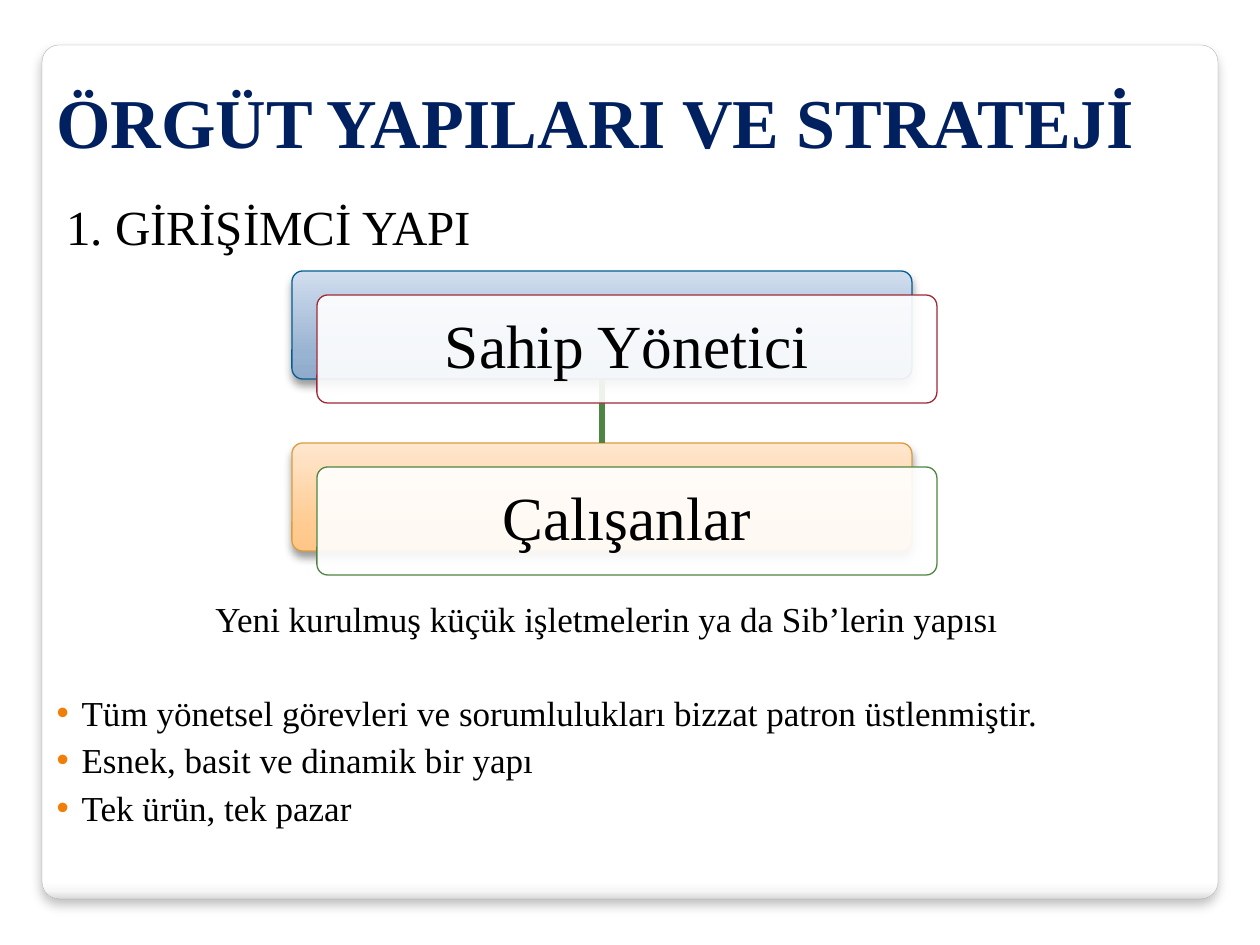
"""Build the slide on organisation structures and strategy: the entrepreneurial structure."""
import pptx
import pptx.util
import pptx.dml.color
import pptx.enum.shapes
import pptx.enum.text
import pptx.oxml.ns
import lxml.etree

RGB = pptx.dml.color.RGBColor
SHAPE = pptx.enum.shapes.MSO_SHAPE
ALIGN = pptx.enum.text.PP_ALIGN
ANCHOR = pptx.enum.text.MSO_ANCHOR
qn = pptx.oxml.ns.qn

NAVY = RGB(0x00, 0x20, 0x60)
BLACK = RGB(0, 0, 0)
WHITE = RGB(255, 255, 255)
GREY = RGB(0xA4, 0xA4, 0xA4)
ORANGE = RGB(0xF0, 0x7F, 0x09)
BLUE = RGB(0x03, 0x5E, 0x94)
RED = RGB(0x9F, 0x29, 0x36)
GOLD = RGB(0xDB, 0x9E, 0x3F)
GREEN = RGB(0x4E, 0x85, 0x42)
PANEL_STOPS = [(0, WHITE), (98, WHITE), (99, RGB(0xF7, 0xF7, 0xF7)), (100, RGB(0xDA, 0xDA, 0xDA))]
BLUE_STOPS = [(0, RGB(0x90, 0xAB, 0xCB)), (25, RGB(0x99, 0xB3, 0xD2)), (100, RGB(0xD1, 0xDE, 0xEE))]
ORANGE_STOPS = [(0, RGB(0xFF, 0xC6, 0x87)), (25, RGB(0xFF, 0xCB, 0x92)), (100, RGB(0xFF, 0xE7, 0xCF))]

FONT = "Times New Roman"
TITLE = "ÖRGÜT YAPILARI VE STRATEJİ"
HEADING = "1. GİRİŞİMCİ YAPI"
CAPTION = "Yeni kurulmuş küçük işletmelerin ya da Sib’lerin yapısı"
TRAITS = [
    "Tüm yönetsel görevleri ve sorumlulukları bizzat patron üstlenmiştir.",
    "Esnek, basit ve dinamik bir yapı",
    "Tek ürün, tek pazar",
]
LEVELS = [
    ("Sahip Yönetici", BLUE_STOPS, BLUE, RED),
    ("Çalışanlar", ORANGE_STOPS, GOLD, GREEN),
]

CARD_LEFT, CARD_TOP, CARD_WIDTH, CARD_HEIGHT = 292, 271, 620, 108
CARD_PITCH = 172
FRONT_DX, FRONT_DY = 25, 24


def px(length):
    return pptx.util.Emu(round(length * 914400 / 126))


def child(parent, tag, **attributes):
    return lxml.etree.SubElement(parent, qn(tag), {k: str(v) for k, v in attributes.items()})


def place(shape, left, top, width, height):
    shape.left, shape.top, shape.width, shape.height = map(px, (left, top, width, height))


def write(shape, lines, size, color=BLACK, align=ALIGN.LEFT, bold=False, top=11):
    frame = shape.text_frame
    frame.text = "\n".join(lines)
    frame.word_wrap = True
    frame.auto_size = pptx.enum.text.MSO_AUTO_SIZE.NONE
    frame.vertical_anchor = ANCHOR.TOP
    frame.margin_top = px(top)
    for index, paragraph in enumerate(frame.paragraphs):
        paragraph.alignment = align
        paragraph.space_before = pptx.util.Pt(3.25 if index else 0)
        for run in paragraph.runs:
            run.font.name, run.font.size, run.font.bold = FONT, pptx.util.Pt(size), bold
            run.font.color.rgb = color
    return frame


def add_bullets(frame):
    for paragraph in frame.paragraphs:
        properties = paragraph._p.get_or_add_pPr()
        properties.set("marL", str(px(25)))
        properties.set("indent", str(px(-25)))
        child(child(properties, "a:buClr"), "a:srgbClr", val=ORANGE)
        child(properties, "a:buFont", typeface="Arial")
        child(properties, "a:buChar", char="•")


def rounded(slide, box, radius, outline, weight):
    shape = slide.shapes.add_shape(SHAPE.ROUNDED_RECTANGLE, *map(px, box))
    shape.adjustments[0] = radius
    shape.shadow.inherit = False
    shape.line.color.rgb = outline
    shape.line.width = pptx.util.Pt(weight)
    return shape


def fill_gradient(shape, stops, angle):
    shape.fill.gradient()
    shape.fill.gradient_angle = angle
    stop_list = shape._element.spPr.find(".//" + qn("a:gsLst"))
    stop_list.clear()
    for position, color in stops:
        child(child(stop_list, "a:gs", pos=position * 1000), "a:srgbClr", val=color)


def cast_shadow(shape, opacity, blur, distance):
    effects = shape._element.spPr.find(qn("a:effectLst"))
    shadow = child(effects, "a:outerShdw", blurRad=pptx.util.Pt(blur), dist=pptx.util.Pt(distance),
                   dir=5400000, rotWithShape=0)
    child(child(shadow, "a:srgbClr", val=BLACK), "a:alpha", val=opacity * 1000)


def add_structure(slide):
    backs = []
    for index, (_, stops, outline, _) in enumerate(LEVELS):
        box = (CARD_LEFT, CARD_TOP + index * CARD_PITCH, CARD_WIDTH, CARD_HEIGHT)
        back = rounded(slide, box, 0.1, outline, 0.75)
        fill_gradient(back, stops, 90)
        cast_shadow(back, 40, 5.2, 3)
        backs.append(back)

    link = slide.shapes.add_connector(pptx.enum.shapes.MSO_CONNECTOR.STRAIGHT, 0, 0, 0, 0)
    link.begin_connect(backs[0], 2)
    link.end_connect(backs[1], 0)
    link.line.color.rgb = GREEN
    link.line.width = pptx.util.Pt(3.35)
    child(link._element.spPr, "a:effectLst")

    for index, (label, _, _, outline) in enumerate(LEVELS):
        box = (CARD_LEFT + FRONT_DX, CARD_TOP + FRONT_DY + index * CARD_PITCH, CARD_WIDTH, CARD_HEIGHT)
        front = rounded(slide, box, 0.1, outline, 0.75)
        front.fill.solid()
        front.fill.fore_color.rgb = WHITE
        child(front._element.spPr.find(qn("a:solidFill"))[0], "a:alpha", val=90000)
        frame = write(front, [label], 35, align=ALIGN.CENTER, top=6)
        frame.vertical_anchor = ANCHOR.MIDDLE
        frame.paragraphs[0].line_spacing = 0.9


def main():
    deck = pptx.Presentation()
    deck.slide_width, deck.slide_height = px(1260), px(945)
    slide = deck.slides.add_slide(deck.slide_layouts[1])
    title, traits = slide.placeholders

    panel = rounded(slide, (42, 45, 1176, 854), 0.02, GREY, 0.16)
    fill_gradient(panel, PANEL_STOPS, 270)
    cast_shadow(panel, 25, 6, 4)
    slide.shapes._spTree.insert(2, panel._element)

    place(title, 44, 66, 1140, 84)
    write(title, [TITLE], 40, NAVY, bold=True, top=13)
    heading = slide.shapes.add_textbox(*map(px, (54, 185, 586, 69)))
    write(heading, [HEADING], 28)
    place(traits, 44, 680, 1062, 150)
    add_bullets(write(traits, TRAITS, 20, align=ALIGN.JUSTIFY))

    add_structure(slide)
    caption = slide.shapes.add_textbox(*map(px, (203, 586, 824, 55)))
    write(caption, [CAPTION], 20, align=ALIGN.JUSTIFY)
    deck.save("out.pptx")


if __name__ == "__main__":
    main()
